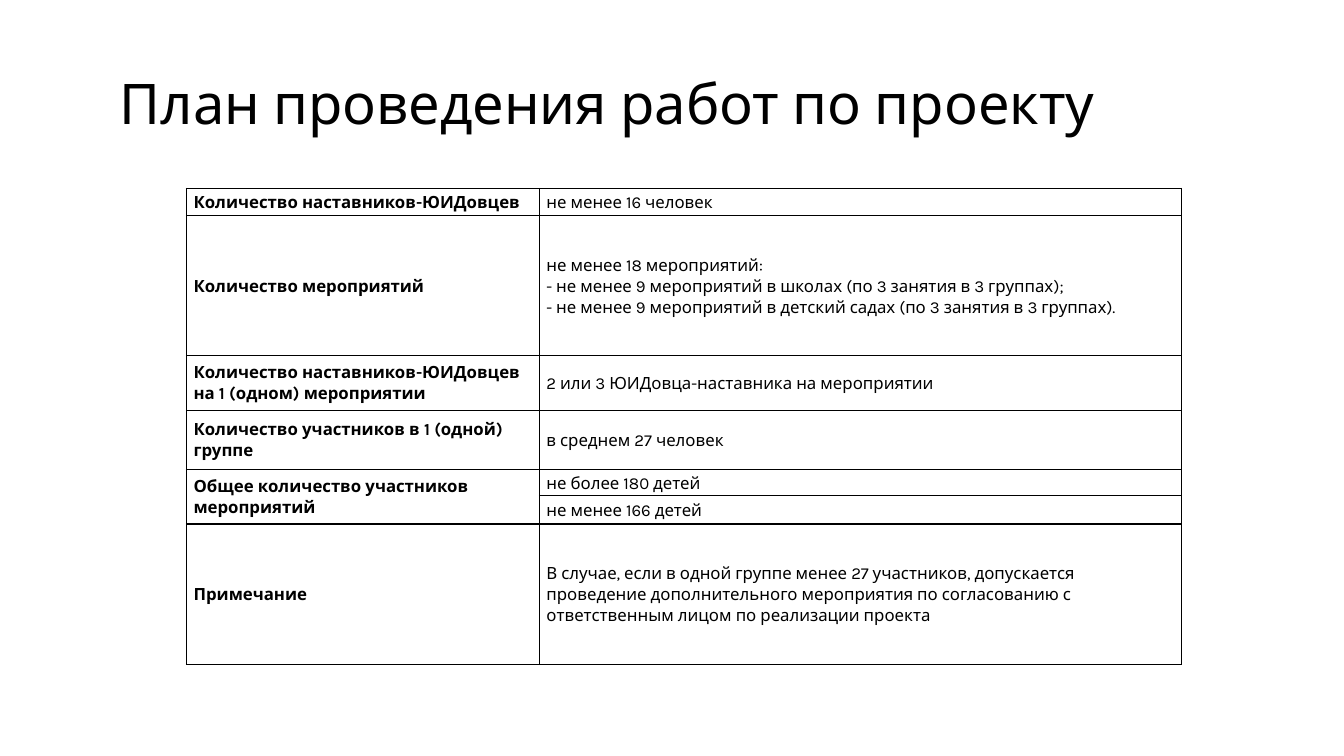
from dataclasses import dataclass

from lxml.etree import SubElement
from pptx import Presentation
from pptx.dml.color import RGBColor
from pptx.enum.text import MSO_ANCHOR, MSO_AUTO_SIZE
from pptx.oxml.ns import qn
from pptx.table import Table, _Cell
from pptx.text.text import _Paragraph
from pptx.util import Inches, Pt

FONT = "Karla"
BLACK = "000000"
COLUMN_WIDTHS = (3.5, 6.37)


@dataclass
class PlanRow:
    label: str
    value: str
    height: float


# An empty label continues the label of the row above
PLAN_ROWS = [
    PlanRow("Количество наставников-ЮИДовцев", "не менее 16 человек", 0.27),
    PlanRow(
        "Количество мероприятий",
        "не менее 18 мероприятий:\n"
        "- не менее 9 мероприятий в школах (по 3 занятия в 3 группах);\n"
        "- не менее 9 мероприятий в детский садах (по 3 занятия в 3 группах).",
        1.39,
    ),
    PlanRow(
        "Количество наставников-ЮИДовцев на 1 (одном) мероприятии",
        "2 или 3 ЮИДовца-наставника на мероприятии",
        0.54,
    ),
    PlanRow("Количество участников в 1 (одной) группе", "в среднем 27 человек", 0.59),
    PlanRow("Общее количество участников мероприятий", "не более 180 детей", 0.26),
    PlanRow("", "не менее 166 детей", 0.28),
    PlanRow(
        "Примечание",
        "В случае, если в одной группе менее 27 участников, допускается "
        "проведение дополнительного мероприятия по согласованию с "
        "ответственным лицом по реализации проекта",
        1.39,
    ),
]


def color(value: str) -> RGBColor:
    return RGBColor.from_string(value)


def write(paragraph: _Paragraph, text: str, size: int, bold: bool = False) -> None:
    paragraph.text = text
    for run in paragraph.runs:
        run.font.name = FONT
        run.font.size = Pt(size)
        run.font.bold = bold
        run.font.color.rgb = color(BLACK)
    # Line breaks take the size of the text around them
    for line_break in paragraph._p.findall(qn("a:br")):
        SubElement(line_break, qn("a:rPr"), sz=str(size * 100))


def add_borders(cell: _Cell) -> None:
    properties = cell._tc.get_or_add_tcPr()
    for position, side in enumerate(("lnL", "lnR", "lnT", "lnB")):
        line = SubElement(properties, qn(f"a:{side}"), w=str(Pt(1)))
        fill = SubElement(line, qn("a:solidFill"))
        SubElement(fill, qn("a:srgbClr"), val=BLACK)
        properties.insert(position, line)


def fill_cell(cell: _Cell, text: str, bold: bool) -> None:
    cell.fill.background()
    add_borders(cell)
    cell.vertical_anchor = MSO_ANCHOR.MIDDLE
    cell.margin_left = cell.margin_right = Inches(0.07)
    cell.margin_top = cell.margin_bottom = 0
    paragraph = cell.text_frame.paragraphs[0]
    paragraph.line_spacing = 1.07
    paragraph.space_after = Pt(8)
    write(paragraph, text, 12, bold)


def fill_table(table: Table) -> None:
    table.first_row = False
    table.horz_banding = False
    for column, width in zip(table.columns, COLUMN_WIDTHS):
        column.width = Inches(width)
    for index, plan_row in enumerate(PLAN_ROWS):
        table.rows[index].height = Inches(plan_row.height)
        fill_cell(table.cell(index, 0), plan_row.label, True)
        fill_cell(table.cell(index, 1), plan_row.value, False)
        if not plan_row.label:
            table.cell(index - 1, 0).merge(table.cell(index, 0))


def main() -> None:
    presentation = Presentation()
    presentation.slide_width = Inches(13.33)
    presentation.slide_height = Inches(7.5)
    slide = presentation.slides.add_slide(presentation.slide_layouts[6])

    # Plan table
    height = sum(plan_row.height for plan_row in PLAN_ROWS)
    frame = slide.shapes.add_table(
        len(PLAN_ROWS), len(COLUMN_WIDTHS),
        Inches(1.85), Inches(1.87), Inches(sum(COLUMN_WIDTHS)), Inches(height),
    )
    fill_table(frame.table)

    # Title
    title = slide.shapes.add_textbox(
        Inches(1.19), Inches(0.71), Inches(10.4), Inches(0.66)
    )
    text_frame = title.text_frame
    text_frame.word_wrap = True
    text_frame.auto_size = MSO_AUTO_SIZE.SHAPE_TO_FIT_TEXT
    text_frame.margin_left = text_frame.margin_right = text_frame.margin_bottom = 0
    text_frame.margin_top = Inches(0.05)
    paragraph = text_frame.paragraphs[0]
    paragraph.line_spacing = 0.9
    write(paragraph, "План проведения работ по проекту", 40)

    presentation.save("out.pptx")


if __name__ == "__main__":
    main()
